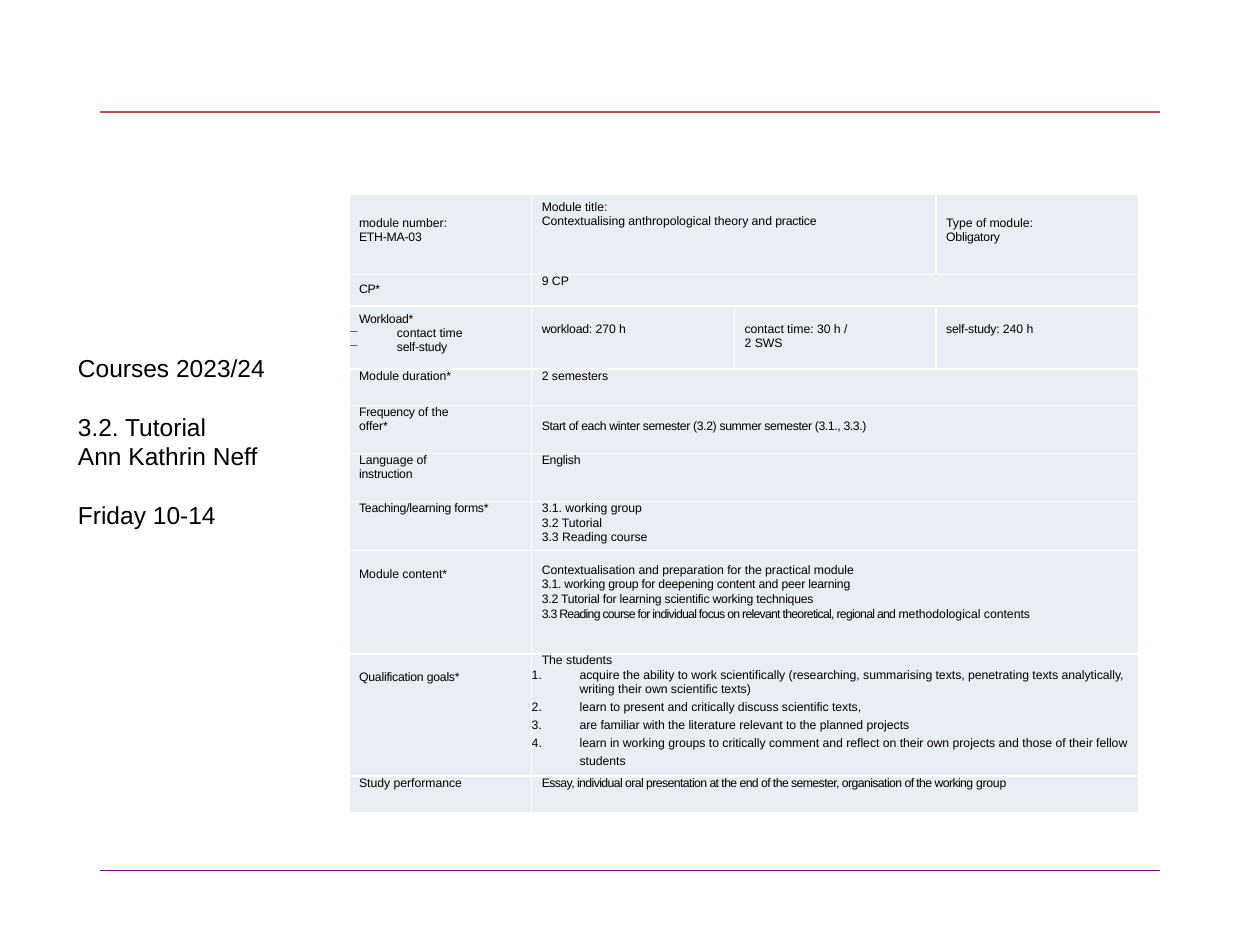
from dataclasses import dataclass
from typing import Optional

from lxml.etree import SubElement
from pptx import Presentation
from pptx.dml.color import RGBColor
from pptx.enum.shapes import MSO_CONNECTOR as Connector
from pptx.oxml.ns import qn
from pptx.util import Inches, Pt

WIDTH, HEIGHT = 10, 7.5
FONT = "Arial"
COLORS = {"text": "000000", "cell": "E9EDF4", "border": "FFFFFF",
          "top rule": "C0504D", "bottom rule": "800080"}
COLUMNS = [1.45, 1.61, 1.6, 1.61]
ROWS = [0.64, 0.25, 0.5, 0.29, 0.38, 0.38, 0.39, 0.82, 0.97, 0.29]
INDENT, LIST_INDENT = 0.08, 0.38
# Top insets that push text down by one line of 6, 7, 8 or 11 points
DROP_6, DROP_7, DROP_8, DROP_11 = 0.1, 0.11, 0.13, 0.18


@dataclass
class Line:
    text: str
    tracking: float = 0              # points
    tail: str = ""                   # closing run with its own tracking
    tail_tracking: float = 0
    before: float = 0                # points
    spacing: Optional[float] = None  # share of a line, or exact Pt length
    bullet: Optional[str] = None     # a character, or "number"


@dataclass
class Cell:
    row: int
    column: int
    lines: list[Line]
    span: int = 1
    top: float = 0
    right: float = 0


TALL, LIST_PITCH = Pt(11.4), Pt(10.3)

CELLS = [
    Cell(0, 0, [Line("module number:"), Line("ETH-MA-03", -0.1, before=0.1)], top=DROP_11),
    Cell(0, 1, [Line("Module title:", spacing=TALL),
                Line("Contextualising anthropological theory and ", 0, "practice", -0.1)], span=2),
    Cell(0, 3, [Line("Type of module:"), Line("Obligatory", -0.1, before=0.1)], top=DROP_11),
    Cell(1, 0, [Line("CP*", -0.2, spacing=TALL)], top=0.01),
    Cell(1, 1, [Line("9 CP")], span=3),
    Cell(2, 0, [Line("Workload*", -0.1, spacing=TALL),
                Line("contact time", bullet="−"),
                Line("self-study", -0.1, before=0.1, bullet="−")]),
    Cell(2, 1, [Line("workload: ", -0.1, "270 h")], top=DROP_8),
    Cell(2, 2, [Line("contact time: 30 h / 2 SWS")], top=DROP_8, right=0.66),
    Cell(2, 3, [Line("self-study: ", -0.1, "240 h")], top=DROP_8),
    Cell(3, 0, [Line("Module duration*")]),
    Cell(3, 1, [Line("2 semesters")], span=3),
    Cell(4, 0, [Line("Frequency ", -0.1, "of the offer*")], right=0.6),
    Cell(4, 1, [Line("Start of each winter semester (3.2) summer semester (3.1., 3.3.)", -0.2)],
         span=3, top=DROP_7),
    Cell(5, 0, [Line("Language of ", 0, "instruction", -0.1)], right=0.6),
    Cell(5, 1, [Line("English", -0.1)], span=3),
    Cell(6, 0, [Line("Teaching/learning forms*", -0.1)]),
    Cell(6, 1, [Line("3.1. working group"), Line("3.2 Tutorial", before=0.7),
                Line("3.3 Reading course", before=0.5)], span=3),
    Cell(7, 0, [Line("Module content*")], top=DROP_8),
    Cell(7, 1, [Line("Contextualisation and preparation for the practical module"),
                Line("3.1. working group for deepening content and peer learning", -0.1, before=0.2),
                Line("3.2 Tutorial for learning scientific working techniques", -0.1, before=0.7),
                Line("3.3 Reading course for individual focus on relevant theoretical, regional and ",
                     -0.4, "methodological contents", before=0.5, spacing=1.06)],
         span=3, top=DROP_6),
    Cell(8, 0, [Line("Qualification goals*", -0.1)], top=DROP_8),
    Cell(8, 1, [Line("The students"),
                Line("acquire the ability to work scientifically (researching, summarising texts, "
                     "penetrating texts analytically, writing their own scientific texts)",
                     before=0.5, bullet="number"),
                Line("learn to present and critically discuss scientific texts,",
                     spacing=LIST_PITCH, bullet="number"),
                Line("are familiar with the literature relevant to the planned projects",
                     spacing=LIST_PITCH, bullet="number"),
                Line("learn in working groups to critically comment and reflect on their own "
                     "projects and those of their fellow students",
                     spacing=LIST_PITCH, bullet="number")], span=3),
    Cell(9, 0, [Line("Study performance")]),
    Cell(9, 1, [Line("Essay, individual oral presentation at the end of the semester, "
                     "organisation of the working ", -0.3, "group", -0.1, spacing=1.03)], span=3),
]


def color(name: str) -> RGBColor:
    return RGBColor.from_string(COLORS[name])


def set_font(paragraph, size: float) -> None:
    paragraph.font.name = FONT
    paragraph.font.size = Pt(size)
    paragraph.font.color.rgb = color("text")


def add_rule(slide, y: float, color_name: str) -> None:
    margin = 0.079 * WIDTH
    rule = slide.shapes.add_connector(Connector.STRAIGHT, Inches(margin), Inches(y),
                                      Inches(WIDTH - margin), Inches(y))
    rule.line.color.rgb = color(color_name)
    rule.line.width = Pt(0.75)
    SubElement(rule._element.spPr, qn("a:effectLst"))


def add_course_note(slide) -> None:
    box = slide.shapes.add_textbox(Inches(0.52), Inches(2.75), Inches(2.75), Inches(1.51))
    frame = box.text_frame
    frame.word_wrap = True
    lines = [("Courses 2023/24", 0), ("3.2. Tutorial", 16.8),
             ("Ann Kathrin Neff", 0), ("Friday 10-14", 16.8)]
    for index, (text, before) in enumerate(lines):
        paragraph = frame.add_paragraph() if index else frame.paragraphs[0]
        paragraph.text = text
        if before:
            paragraph.space_before = Pt(before)
        set_font(paragraph, 14)


def fill_paragraph(paragraph, line: Line) -> None:
    for text, tracking in ((line.text, line.tracking), (line.tail, line.tail_tracking)):
        if text:
            run = paragraph.add_run()
            run.text = text
            if tracking:
                run._r.get_or_add_rPr().set("spc", str(round(tracking * 100)))
    if line.before:
        paragraph.space_before = Pt(line.before)
    if line.spacing:
        paragraph.line_spacing = line.spacing
    properties = paragraph._p.get_or_add_pPr()
    properties.set("marL", str(Inches(LIST_INDENT if line.bullet else INDENT)))
    if line.bullet:
        properties.set("indent", str(-Inches(LIST_INDENT)))
        if line.bullet == "number":
            SubElement(properties, qn("a:buAutoNum"), type="arabicPeriod")
        else:
            SubElement(properties, qn("a:buChar"), char=line.bullet)
    set_font(paragraph, 7)


def style_cell(cell) -> None:
    properties = cell._tc.get_or_add_tcPr()
    for side in ("lnL", "lnR", "lnT", "lnB"):
        border = SubElement(properties, qn(f"a:{side}"), w=str(Pt(1)))
        fill = SubElement(border, qn("a:solidFill"))
        SubElement(fill, qn("a:srgbClr"), val=COLORS["border"])
    cell.fill.solid()
    cell.fill.fore_color.rgb = color("cell")
    cell.margin_left = cell.margin_right = cell.margin_top = cell.margin_bottom = 0


def add_module_table(slide) -> None:
    frame = slide.shapes.add_table(len(ROWS), len(COLUMNS), Inches(2.77), Inches(1.54),
                                   Inches(sum(COLUMNS)), Inches(sum(ROWS)))
    table = frame.table
    table.first_row = table.horz_banding = False
    for column, width in zip(table.columns, COLUMNS):
        column.width = Inches(width)
    for row, height in zip(table.rows, ROWS):
        row.height = Inches(height)
    for cell in table.iter_cells():
        style_cell(cell)
        set_font(cell.text_frame.paragraphs[0], 7)
    for entry in CELLS:
        cell = table.cell(entry.row, entry.column)
        if entry.span > 1:
            cell.merge(table.cell(entry.row, entry.column + entry.span - 1))
        cell.margin_top, cell.margin_right = Inches(entry.top), Inches(entry.right)
        text_frame = cell.text_frame
        for index, line in enumerate(entry.lines):
            paragraph = text_frame.add_paragraph() if index else text_frame.paragraphs[0]
            fill_paragraph(paragraph, line)


def main() -> None:
    presentation = Presentation()
    presentation.slide_width, presentation.slide_height = Inches(WIDTH), Inches(HEIGHT)
    slide = presentation.slides.add_slide(presentation.slide_layouts[6])
    # Rules above and below the content
    add_rule(slide, 0.89, "top rule")
    add_rule(slide, 6.91, "bottom rule")
    # Course note on the left, module description on the right
    add_course_note(slide)
    add_module_table(slide)
    presentation.save("out.pptx")


if __name__ == "__main__":
    main()
